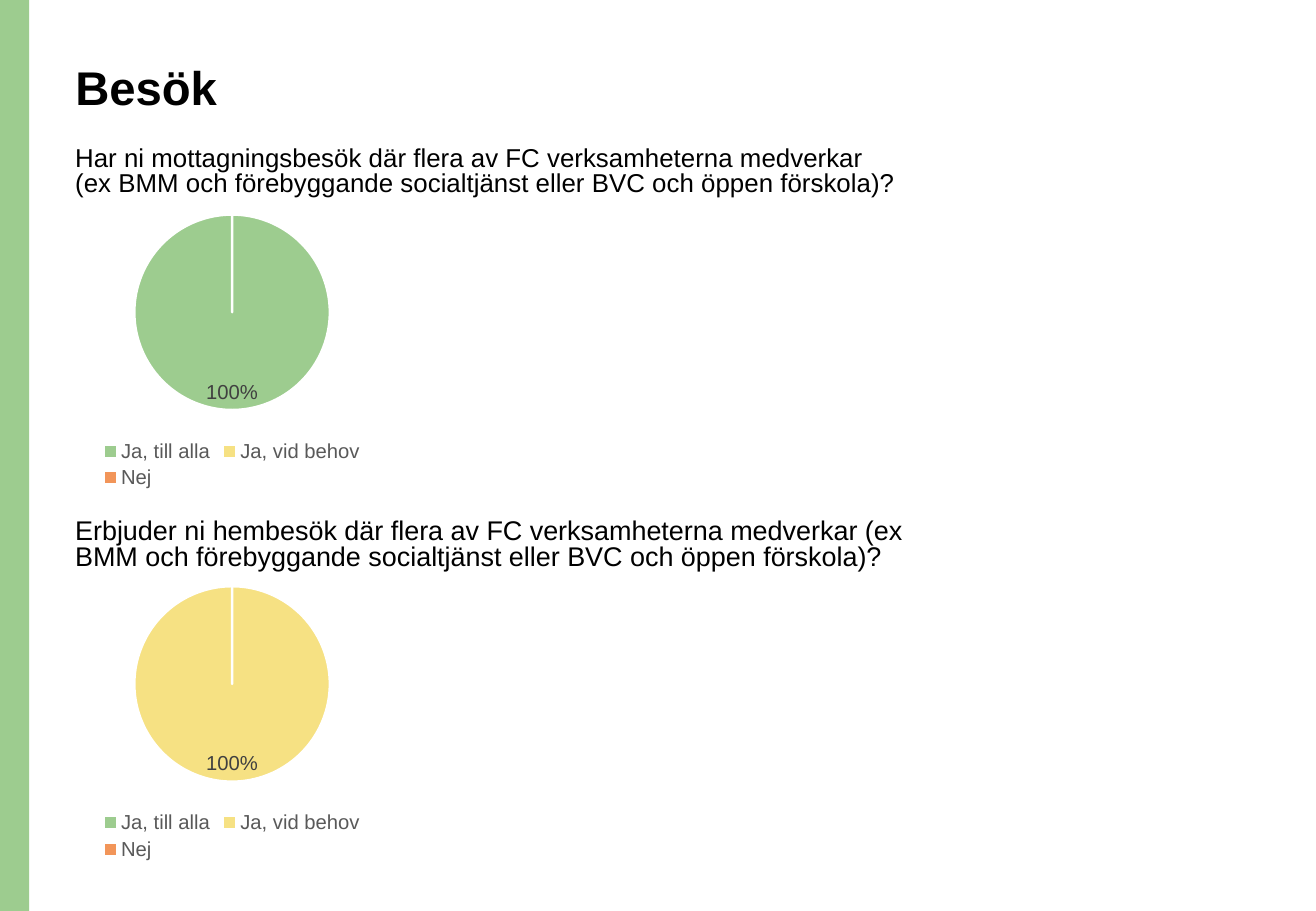
import dataclasses

import pptx
import pptx.chart.data
import pptx.dml.color
import pptx.enum.chart
import pptx.enum.shapes
import pptx.enum.text
import pptx.oxml
import pptx.oxml.ns
import pptx.util

Inches = pptx.util.Inches
Pt = pptx.util.Pt


@dataclasses.dataclass(frozen=True)
class Theme:
    font: str = "Arial"
    text: str = "000000"
    legend: str = "595959"
    label: str = "404040"
    white: str = "FFFFFF"
    accent: str = "9DCC8F"
    answers: tuple = ("9DCC8F", "F6E183", "F29559")
    title_size: float = 28
    chart_size: float = 10
    label_size: float = 12


THEME = Theme()
ANSWERS = ("Ja, till alla", "Ja, vid behov", "Nej")
LEFT = 0.52
CHART_OFFSET = 0.45
QUESTIONS = (
    (1.17, 7.01, 15.3, (1, 0, 0),
     "Har ni mottagningsbesök där flera av FC verksamheterna medverkar "
     "(ex BMM och förebyggande socialtjänst eller BVC och öppen förskola)?"),
    (4.23, 7.49, 16, (0, 1, 0),
     "Erbjuder ni hembesök där flera av FC verksamheterna medverkar "
     "(ex BMM och förebyggande socialtjänst eller BVC och öppen förskola)?"),
)


def color(value):
    return pptx.dml.color.RGBColor.from_string(value)


def style_font(font, size, value, bold=False):
    font.name = THEME.font
    font.size = Pt(size)
    font.bold = bold
    font.color.rgb = color(value)


def write_text(shape, text, size, line_spacing, bold=False):
    frame = shape.text_frame
    frame.word_wrap = True
    frame.auto_size = pptx.enum.text.MSO_AUTO_SIZE.NONE
    frame.vertical_anchor = pptx.enum.text.MSO_ANCHOR.TOP
    paragraph = frame.paragraphs[0]
    paragraph.alignment = pptx.enum.text.PP_ALIGN.LEFT
    paragraph.line_spacing = line_spacing
    run = paragraph.add_run()
    run.text = text
    style_font(run.font, size, THEME.text, bold)


def add_side_bar(slide, left, top, width, height):
    bar = slide.shapes.add_shape(
        pptx.enum.shapes.MSO_SHAPE.RECTANGLE,
        Inches(left), Inches(top), Inches(width), Inches(height))
    bar.shadow.inherit = False
    bar.fill.solid()
    bar.fill.fore_color.rgb = color(THEME.accent)
    bar.line.fill.background()


def add_title(slide, left, top, width, height):
    title = slide.shapes.title
    title.left, title.top = Inches(left), Inches(top)
    title.width, title.height = Inches(width), Inches(height)
    write_text(title, "Besök", THEME.title_size, 0.9, True)


def place_plot(chart, x, y, w, h):
    plot_area = chart.plots[0]._element.getparent()
    for layout in plot_area.findall(pptx.oxml.ns.qn("c:layout")):
        plot_area.remove(layout)
    edges = "".join(f'<c:{name} val="{value}"/>' for name, value in
                    (("xMode", "edge"), ("yMode", "edge"),
                     ("x", x), ("y", y), ("w", w), ("h", h)))
    plot_area.insert(0, pptx.oxml.parse_xml(
        f'<c:layout {pptx.oxml.ns.nsdecls("c")}><c:manualLayout>'
        f'<c:layoutTarget val="inner"/>{edges}</c:manualLayout></c:layout>'))


def add_pie(slide, left, top, width, height, values):
    data = pptx.chart.data.CategoryChartData(number_format="0%")
    data.categories = ANSWERS
    data.add_series("Series 1", values)
    chart = slide.shapes.add_chart(
        pptx.enum.chart.XL_CHART_TYPE.PIE,
        Inches(left), Inches(top), Inches(width), Inches(height), data).chart
    style_font(chart.font, THEME.chart_size, THEME.text)
    chart.has_title = False
    chart.has_legend = True
    chart.legend.position = pptx.enum.chart.XL_LEGEND_POSITION.BOTTOM
    chart.legend.include_in_layout = False
    style_font(chart.legend.font, THEME.label_size, THEME.legend)

    plot = chart.plots[0]
    plot.vary_by_categories = True
    for index, answer_color in enumerate(THEME.answers):
        slice_format = plot.series[0].points[index].format
        slice_format.fill.solid()
        slice_format.fill.fore_color.rgb = color(answer_color)
        slice_format.line.color.rgb = color(THEME.white)
        slice_format.line.width = Pt(1.5)

    labels = plot.series[0].data_labels
    labels.show_value = True
    labels.show_percentage = False
    labels.number_format = "0%;;"
    labels.number_format_is_linked = False
    labels.position = pptx.enum.chart.XL_LABEL_POSITION.INSIDE_END
    style_font(labels.font, THEME.label_size, THEME.label)
    place_plot(chart, 0.21, 0.06, 0.58, 0.66)


def add_question(slide, left, top, width, size, values, text):
    question = slide.shapes.add_textbox(
        Inches(left), Inches(top), Inches(width), Inches(0.57))
    write_text(question, text, size, 0.8)
    add_pie(slide, left, top + CHART_OFFSET, 2.78, 2.44, values)


def main():
    presentation = pptx.Presentation()
    presentation.slide_width = Inches(10.83)
    presentation.slide_height = Inches(7.5)
    slide = presentation.slides.add_slide(presentation.slide_layouts[5])
    add_side_bar(slide, 0, 0, 0.24, 7.5)
    add_title(slide, LEFT, 0.48, 9.34, 1.02)
    for top, width, size, values, text in QUESTIONS:
        add_question(slide, LEFT, top, width, size, values, text)
    presentation.save("out.pptx")


if __name__ == "__main__":
    main()
